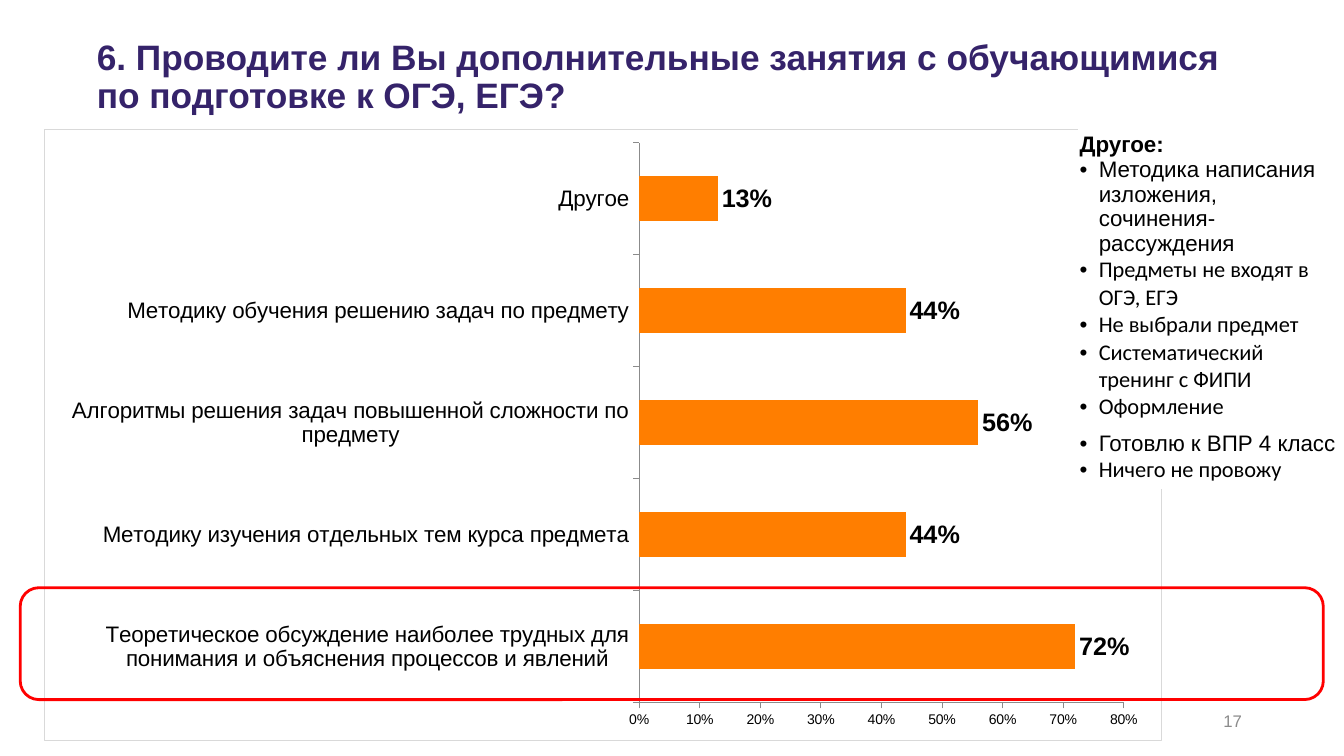
from lxml import etree
from pptx import Presentation
from pptx import util as u
from pptx.chart import data as chart_data
from pptx.dml.color import RGBColor
from pptx.enum import chart as charts, shapes, text
from pptx.oxml import parse_xml
from pptx.oxml.ns import nsdecls, qn

COLORS = {
    "title": "35236A", "text": "000000", "muted": "8B8B8B", "bar": "FF7E00",
    "frame": "D9D9D9", "highlight": "FF0000", "paper": "FFFFFF",
}
ANSWERS = {
    "Теоретическое обсуждение наиболее трудных для понимания и объяснения процессов и явлений": 0.72,
    "Методику изучения отдельных тем курса предмета": 0.44,
    "Алгоритмы решения задач повышенной сложности по предмету": 0.56,
    "Методику обучения решению задач по предмету": 0.44,
    "Другое": 0.13,
}
OTHER_ROWS = [
    (6.2, [
        ("Другое:", "Arial", False),
        ("Методика написания изложения, сочинения-рассуждения", "Arial", True),
        ("Предметы не входят в ОГЭ, ЕГЭ", "Calibri", True),
        ("Не выбрали предмет", "Calibri", True),
        ("Систематический тренинг с ФИПИ", "Calibri", True),
        ("Оформление", "Calibri", True),
    ]),
    (1.37, [
        ("Готовлю к ВПР 4 класс", "Arial", True),
        ("Ничего не провожу", "Calibri", True),
    ]),
]


class SurveySlide:
    """Draws the elements of one survey slide in a shared style."""

    def __init__(self, presentation):
        self.slide = presentation.slides.add_slide(presentation.slide_layouts[5])

    def box(self, *lengths):
        return [u.Cm(length) for length in lengths]

    def style(self, font, size, color="text", bold=False, name="Arial"):
        font.name, font.size, font.bold = name, u.Pt(size), bold
        font.color.rgb = RGBColor.from_string(COLORS[color])

    def outline(self, line, color, width):
        line.color.rgb = RGBColor.from_string(COLORS[color])
        line.width = u.Pt(width)

    def title(self, wording, *lengths):
        shape = self.slide.shapes.title
        shape.left, shape.top, shape.width, shape.height = self.box(*lengths)
        frame = shape.text_frame
        frame.text = wording
        frame.word_wrap = True
        frame.auto_size = text.MSO_AUTO_SIZE.NONE
        frame.vertical_anchor = text.MSO_ANCHOR.MIDDLE
        frame.margin_left = frame.margin_right = frame.margin_top = 0
        frame.margin_bottom = u.Cm(1.1)
        paragraph = frame.paragraphs[0]
        paragraph.alignment = text.PP_ALIGN.LEFT
        paragraph.line_spacing = 0.9
        self.style(paragraph.runs[0].font, 25.2, "title", True)

    def bar_chart(self, answers, *lengths):
        data = chart_data.CategoryChartData(number_format="0%")
        data.categories = list(answers)
        data.add_series("Series 1", list(answers.values()))
        chart = self.slide.shapes.add_chart(
            charts.XL_CHART_TYPE.BAR_CLUSTERED, *self.box(*lengths), data).chart
        chart.has_legend = chart.has_title = False
        self.style(chart.font, 10)
        plot = chart.plots[0]
        plot.gap_width = 150
        plot.vary_by_categories = False
        fill = plot.series[0].format.fill
        fill.solid()
        fill.fore_color.rgb = RGBColor.from_string(COLORS["bar"])
        plot.has_data_labels = True
        labels = plot.data_labels
        labels.show_value = True
        labels.number_format, labels.number_format_is_linked = "0%", False
        labels.position = charts.XL_LABEL_POSITION.OUTSIDE_END
        self.style(labels.font, 18, bold=True)
        for axis, size in ((chart.category_axis, 16), (chart.value_axis, 10)):
            axis.has_major_gridlines = False
            axis.major_tick_mark = charts.XL_TICK_MARK.OUTSIDE
            self.style(axis.tick_labels.font, size)
            self.outline(axis.format.line, "muted", 0.5)
        scale = chart.value_axis
        scale.minimum_scale, scale.maximum_scale, scale.major_unit = 0, 0.8, 0.1
        scale.tick_labels.number_format = "0%"
        scale.tick_labels.number_format_is_linked = False
        self.frame_chart(chart.element)

    def frame_chart(self, space):
        area = space.find(qn("c:chart")).find(qn("c:plotArea"))
        for old in area.findall(qn("c:layout")):
            area.remove(old)
        places = "".join(f'<c:{key} val="{value}"/>' for key, value in (
            ("layoutTarget", "inner"), ("xMode", "edge"), ("yMode", "edge"),
            ("x", 0.532), ("y", 0.022), ("w", 0.434), ("h", 0.916)))
        area.insert(0, parse_xml(
            f'<c:layout {nsdecls("c")}><c:manualLayout>{places}</c:manualLayout></c:layout>'))
        space.find(qn("c:chart")).addnext(parse_xml(
            f'<c:spPr {nsdecls("c", "a")}><a:noFill/><a:ln w="9525"><a:solidFill>'
            f'<a:srgbClr val="{COLORS["frame"]}"/></a:solidFill></a:ln></c:spPr>'))

    def bullet(self, paragraph):
        properties = paragraph._p.get_or_add_pPr()
        indent = u.Cm(0.48)
        properties.set("marL", str(indent))
        properties.set("indent", str(-indent))
        color = etree.SubElement(properties, qn("a:buClr"))
        etree.SubElement(color, qn("a:srgbClr"), val=COLORS["text"])
        etree.SubElement(properties, qn("a:buFont"), typeface="Arial")
        etree.SubElement(properties, qn("a:buChar"), char="•")

    def cell_borders(self, cell):
        properties = cell._tc.get_or_add_tcPr()
        for index, side in enumerate(("lnL", "lnR", "lnT", "lnB")):
            properties.insert(index, parse_xml(
                f'<a:{side} {nsdecls("a")} w="12192"><a:solidFill>'
                f'<a:srgbClr val="{COLORS["paper"]}"/></a:solidFill></a:{side}>'))

    def list_table(self, rows, left, top, width):
        height = sum(row_height for row_height, _ in rows)
        table = self.slide.shapes.add_table(
            len(rows), 1, *self.box(left, top, width, height)).table
        table.first_row = table.horz_banding = False
        for index, (row_height, items) in enumerate(rows):
            table.rows[index].height = u.Cm(row_height)
            cell = table.cell(index, 0)
            cell.fill.solid()
            cell.fill.fore_color.rgb = RGBColor.from_string(COLORS["paper"])
            self.cell_borders(cell)
            cell.margin_left = cell.margin_right = u.Cm(0.03)
            cell.margin_top = cell.margin_bottom = u.Cm(0.13)
            cell.vertical_anchor = text.MSO_ANCHOR.BOTTOM
            cell.text_frame.text = "\n".join(item[0] for item in items)
            for paragraph, (_, font, bulleted) in zip(cell.text_frame.paragraphs, items):
                self.style(paragraph.runs[0].font, 16, bold=not bulleted, name=font)
                if bulleted:
                    self.bullet(paragraph)

    def page_number(self, number, *lengths):
        frame = self.slide.shapes.add_textbox(*self.box(*lengths)).text_frame
        frame.text = number
        frame.word_wrap = True
        frame.vertical_anchor = text.MSO_ANCHOR.MIDDLE
        paragraph = frame.paragraphs[0]
        paragraph.alignment = text.PP_ALIGN.RIGHT
        self.style(paragraph.runs[0].font, 12, "muted")

    def highlight(self, *lengths):
        shape = self.slide.shapes.add_shape(
            shapes.MSO_SHAPE.ROUNDED_RECTANGLE, *self.box(*lengths))
        shape.shadow.inherit = False
        shape.fill.background()
        self.outline(shape.line, "highlight", 2)


def main():
    presentation = Presentation()
    presentation.slide_width, presentation.slide_height = u.Cm(33.87), u.Cm(19.05)
    survey = SurveySlide(presentation)
    survey.bar_chart(ANSWERS, 1.12, 3.25, 28.17, 15.42)
    survey.title("6. Проводите ли Вы дополнительные занятия с обучающимися по подготовке к ОГЭ, ЕГЭ?",
                 2.44, 1.42, 29.21, 2.21)
    survey.list_table(OTHER_ROWS, 27.18, 3.2, 6.53)
    survey.page_number("17", 23.93, 17.65, 7.62, 1.02)
    survey.highlight(0.51, 14.81, 32.84, 2.82)
    presentation.save("out.pptx")


if __name__ == "__main__":
    main()
